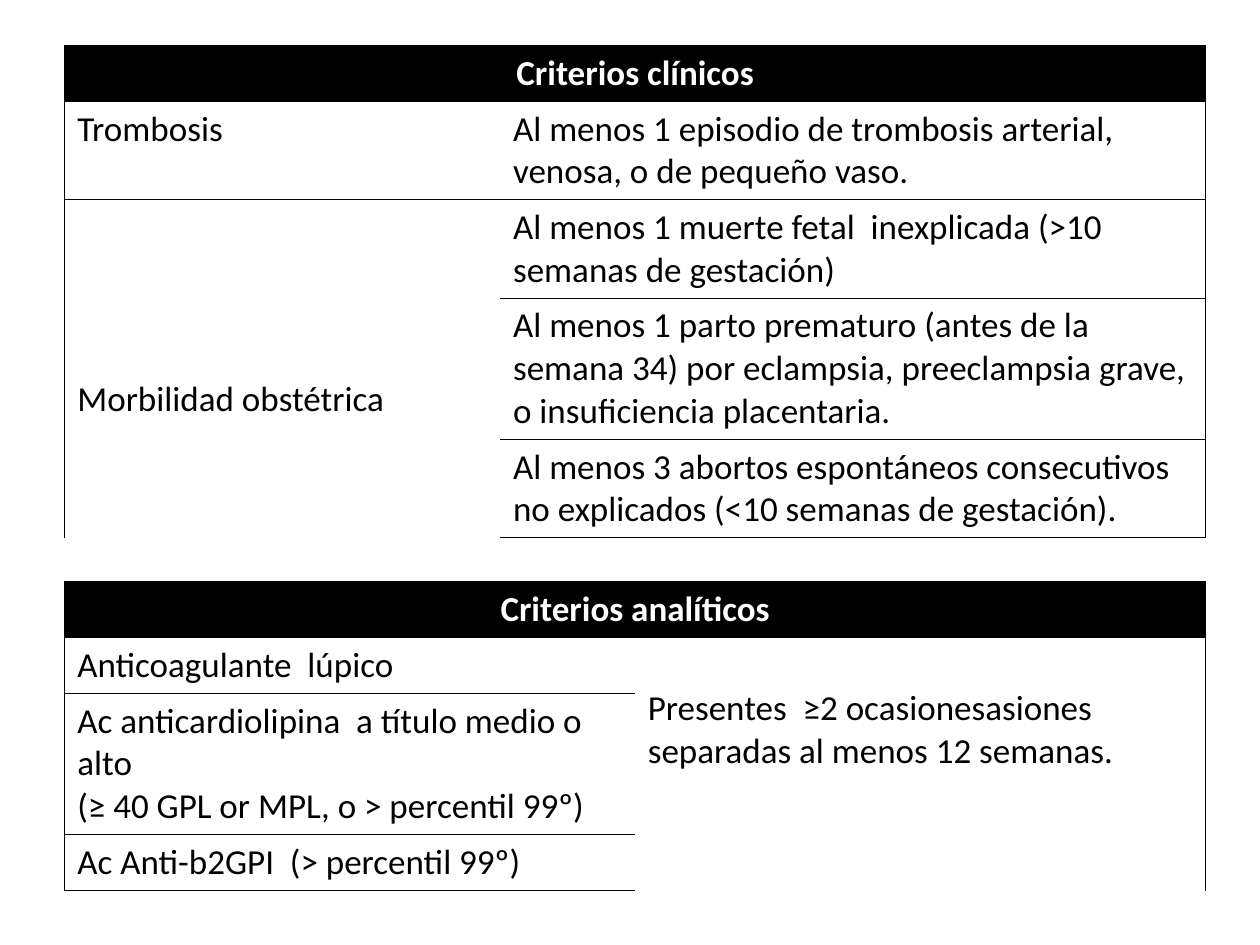
"""Build a slide with the clinical and analytical criteria tables."""
from lxml.etree import SubElement
from pptx import Presentation
from pptx.dml.color import RGBColor
from pptx.enum.text import PP_ALIGN
from pptx.oxml import parse_xml
from pptx.oxml.ns import nsdecls, qn
from pptx.util import Pt

COLORS = {"ink": "000000", "paper": "FFFFFF"}


def write(cell, text, color="ink", bold=False, align=PP_ALIGN.LEFT, top=3.6):
    cell.margin_top = Pt(top)
    tf = cell.text_frame
    for i, line in enumerate(text.split("\n")):
        p = tf.add_paragraph() if i else tf.paragraphs[0]
        p.alignment = align
        r = p.add_run()
        r.text = line
        r.font.name = "Calibri"
        r.font.size = Pt(20)
        r.font.bold = bold
        r.font.color.rgb = RGBColor.from_string(COLORS[color])


def set_borders(cell, sides):
    tc_pr = cell._tc.get_or_add_tcPr()
    for i, side in enumerate("LRTB"):
        ln = parse_xml(f'<a:ln{side} w="{Pt(0.75)}" {nsdecls("a")}/>')
        if side in sides:
            fill = SubElement(ln, qn("a:solidFill"))
            SubElement(fill, qn("a:srgbClr"), val=COLORS["ink"])
        else:
            SubElement(ln, qn("a:noFill"))
        tc_pr.insert(i, ln)


tables = [
    {
        "top": 26,
        "cols": [249, 403],
        "rows": [32, 56, 56, 80.5, 56],
        "title": "Criterios clínicos",
        "merge": ((2, 0), (4, 0)),
        "merge_top": 102,
        "texts": {
            (1, 0): "Trombosis",
            (1, 1): "Al menos 1 episodio de trombosis arterial, venosa, o de pequeño vaso.",
            (2, 0): "Morbilidad obstétrica",
            (2, 1): "Al menos 1 muerte fetal  inexplicada (>10 semanas de gestación)",
            (3, 1): "Al menos 1 parto prematuro (antes de la semana 34) por eclampsia, "
                    "preeclampsia grave, o insuficiencia placentaria.",
            (4, 1): "Al menos 3 abortos espontáneos consecutivos no explicados "
                    "(<10 semanas de gestación).",
        },
    },
    {
        "top": 332.5,
        "cols": [326, 326],
        "rows": [32, 31.5, 80.5, 32],
        "title": "Criterios analíticos",
        "merge": ((1, 1), (3, 1)),
        "merge_top": 28,
        "texts": {
            (1, 0): "Anticoagulante  lúpico",
            (1, 1): "Presentes  ≥2 ocasionesasiones separadas al menos 12 semanas.",
            (2, 0): "Ac anticardiolipina  a título medio o alto\n"
                    "(≥ 40 GPL or MPL, o > percentil 99º)",
            (3, 0): "Ac Anti-b2GPI  (> percentil 99º)",
        },
    },
]

prs = Presentation()
prs.slide_width, prs.slide_height = Pt(720), Pt(540)
s = prs.slides.add_slide(prs.slide_layouts[6])

for spec_table in tables:
    cols, rows = spec_table["cols"], spec_table["rows"]
    tbl = s.shapes.add_table(
        len(rows), len(cols), Pt(37), Pt(spec_table["top"]), Pt(sum(cols)), Pt(sum(rows))
    ).table
    for col, width in zip(tbl.columns, cols):
        col.width = Pt(width)
    for row, height in zip(tbl.rows, rows):
        row.height = Pt(height)

    first, last = spec_table["merge"]
    tbl.cell(0, 0).merge(tbl.cell(0, 1))
    tbl.cell(*first).merge(tbl.cell(*last))

    for r in range(len(rows)):
        for c in range(len(cols)):
            cell = tbl.cell(r, c)
            cell.fill.solid()
            cell.fill.fore_color.rgb = RGBColor.from_string(COLORS["paper" if r else "ink"])
            sides = "R" if c else "L"
            if c != first[1] or r <= first[0]:
                sides += "T"
            if c != first[1] or r < first[0] or r == last[0]:
                sides += "B"
            set_borders(cell, sides)

    write(tbl.cell(0, 0), spec_table["title"], color="paper", bold=True, align=PP_ALIGN.CENTER)
    for place, text in spec_table["texts"].items():
        write(tbl.cell(*place), text, top=spec_table["merge_top"] if place == first else 3.6)

prs.save("out.pptx")
